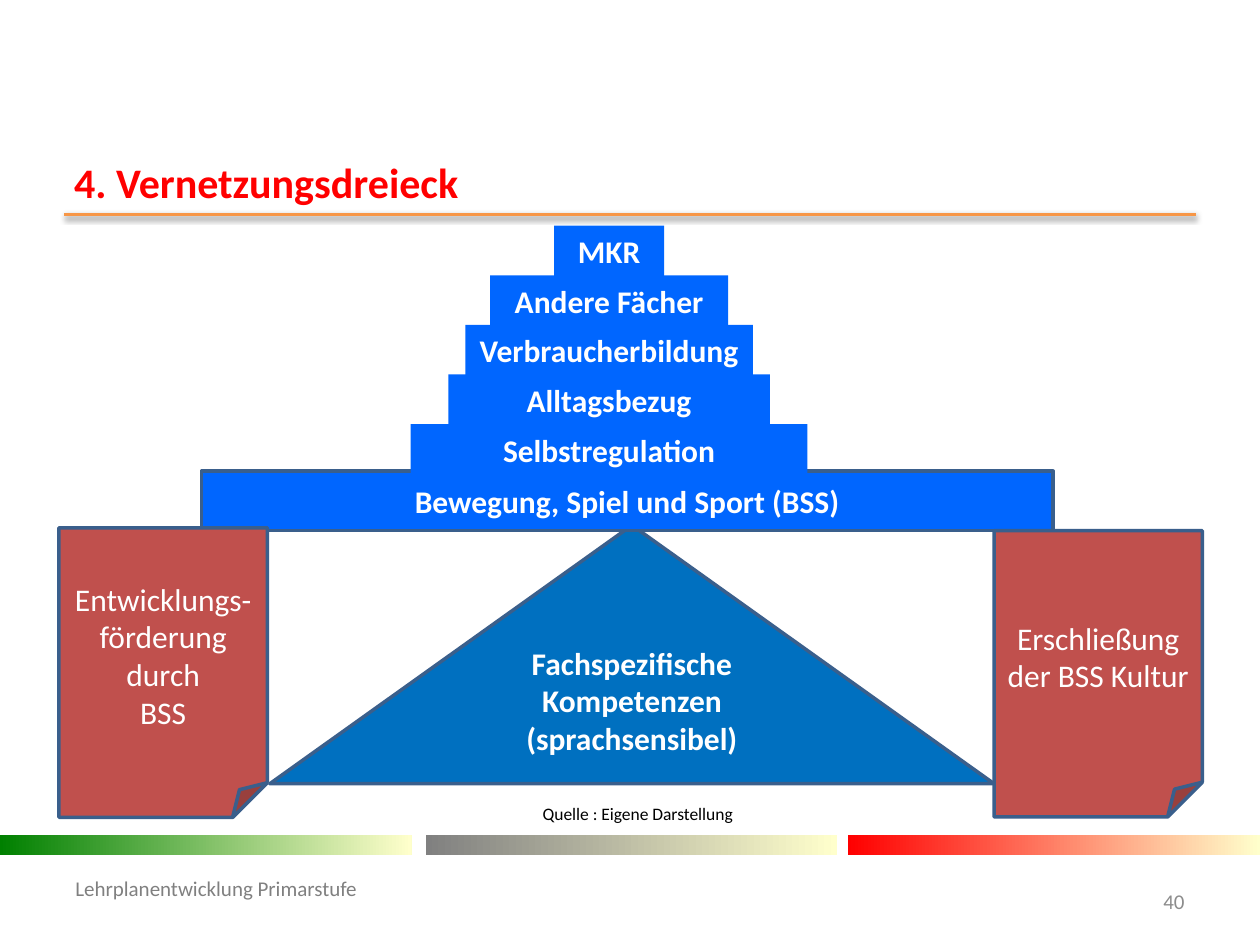
import lxml.etree
import pptx
import pptx.dml.color
import pptx.enum.shapes
import pptx.enum.text
import pptx.oxml
import pptx.util

Cm = pptx.util.Cm
Pt = pptx.util.Pt
SHAPE = pptx.enum.shapes.MSO_SHAPE
ALIGN = pptx.enum.text.PP_ALIGN
ANCHOR = pptx.enum.text.MSO_ANCHOR


def rgb(value):
    return pptx.dml.color.RGBColor.from_string(value)


def write(shape, text, size=18, color="FFFFFF", bold=False, align=ALIGN.CENTER,
          anchor=ANCHOR.MIDDLE, wrap=True, top=0.13, bottom=0.13):
    frame = shape.text_frame
    frame.text = text
    frame.word_wrap = wrap
    frame.auto_size = pptx.enum.text.MSO_AUTO_SIZE.NONE
    frame.vertical_anchor = anchor
    frame.margin_top = Cm(top)
    frame.margin_bottom = Cm(bottom)
    for paragraph in frame.paragraphs:
        paragraph.alignment = align
        paragraph.font.name = "Calibri"
        paragraph.font.size = Pt(size)
        paragraph.font.bold = bold
        paragraph.font.color.rgb = rgb(color)


deck = pptx.Presentation()
deck.slide_width = Cm(25.4)
deck.slide_height = Cm(19.05)
slide = deck.slides.add_slide(deck.slide_layouts[5])
shapes = slide.shapes

title = shapes.title
title.left, title.top, title.width, title.height = Cm(1.24), Cm(3.02), Cm(22.89), Cm(1.27)
write(title, "4. Vernetzungsdreieck", size=24, color="FF0000", bold=True,
      align=ALIGN.LEFT, anchor=ANCHOR.TOP)

title_rule = shapes.add_connector(pptx.enum.shapes.MSO_CONNECTOR.STRAIGHT,
                                  Cm(1.3), Cm(4.32), Cm(24.1), Cm(4.32))
title_rule.line.color.rgb = rgb("F79646")
title_rule.line.width = Pt(2)
title_rule._element.spPr.append(pptx.oxml.parse_xml(
    '<a:effectLst xmlns:a="http://schemas.openxmlformats.org/drawingml/2006/main">'
    '<a:outerShdw blurRad="39370" dist="20320" dir="5400000" rotWithShape="0">'
    '<a:srgbClr val="000000"><a:alpha val="38000"/></a:srgbClr>'
    '</a:outerShdw></a:effectLst>'))

for left, start_color in [(0, "008000"), (8.58, "808080"), (17.1, "FF0000")]:
    band = shapes.add_shape(SHAPE.RECTANGLE, Cm(left), Cm(16.84), Cm(8.3), Cm(0.4))
    band.shadow.inherit = False
    band.line.fill.background()
    band.fill.gradient()
    band.fill.gradient_angle = 0
    for stop, color in zip(band.fill.gradient_stops, [start_color, "FFFFCC"]):
        stop.color.rgb = rgb(color)

footer = shapes.add_textbox(Cm(1.27), Cm(17.65), Cm(7.82), Cm(1.02))
write(footer, "Lehrplanentwicklung Primarstufe", size=12, color="808080",
      align=ALIGN.LEFT, top=0, bottom=0.5)
page_number = shapes.add_textbox(Cm(22.5), Cm(17.65), Cm(1.63), Cm(1.02))
write(page_number, "40", size=12, color="8C8C8C", align=ALIGN.RIGHT)

foundations = [
    (SHAPE.ISOSCELES_TRIANGLE, 5.44, 10.59, 14.6, 5.21, "0070C0", True, 0.89,
     "Fachspezifische Kompetenzen\n(sprachsensibel)"),
    (SHAPE.RECTANGLE, 4.06, 9.5, 17.17, 1.2, "0066FF", True, 0.13,
     "Bewegung, Spiel und Sport (BSS)"),
    (SHAPE.FOLDED_CORNER, 1.19, 10.64, 4.2, 5.84, "C0504D", False, 0.13,
     "Entwicklungs-förderung\ndurch\nBSS"),
    (SHAPE.FOLDED_CORNER, 20.04, 10.7, 4.2, 5.77, "C0504D", False, 0.13,
     "Erschließung der BSS Kultur"),
]
for outline, left, top, width, height, color, bold, bottom, text in foundations:
    foundation = shapes.add_shape(outline, Cm(left), Cm(top), Cm(width), Cm(height))
    foundation.shadow.inherit = False
    foundation.fill.solid()
    foundation.fill.fore_color.rgb = rgb(color)
    foundation.line.color.rgb = rgb("3A5F8C")
    foundation.line.width = Pt(2)
    write(foundation, text, bold=bold, bottom=bottom)

pyramid_center, pyramid_top, step_pitch = 12.28, 4.55, 1.0
steps = [("MKR", 2.22), ("Andere Fächer", 4.8), ("Verbraucherbildung", 5.8),
         ("Alltagsbezug", 6.48), ("Selbstregulation", 8.0)]
for row, (text, width) in enumerate(steps):
    step = shapes.add_textbox(Cm(pyramid_center - width / 2), Cm(pyramid_top + row * step_pitch),
                              Cm(width), Cm(1.02))
    step.fill.solid()
    step.fill.fore_color.rgb = rgb("0066FF")
    write(step, text, bold=True, anchor=ANCHOR.TOP, wrap=False)

credit = shapes.add_textbox(Cm(10.69), Cm(16.05), Cm(5.41), Cm(0.69))
credit.fill.solid()
credit.fill.fore_color.rgb = rgb("FFFFFF")
write(credit, "Quelle : Eigene Darstellung", size=10, color="000000",
      align=ALIGN.LEFT, anchor=ANCHOR.TOP)

deck.save("out.pptx")
